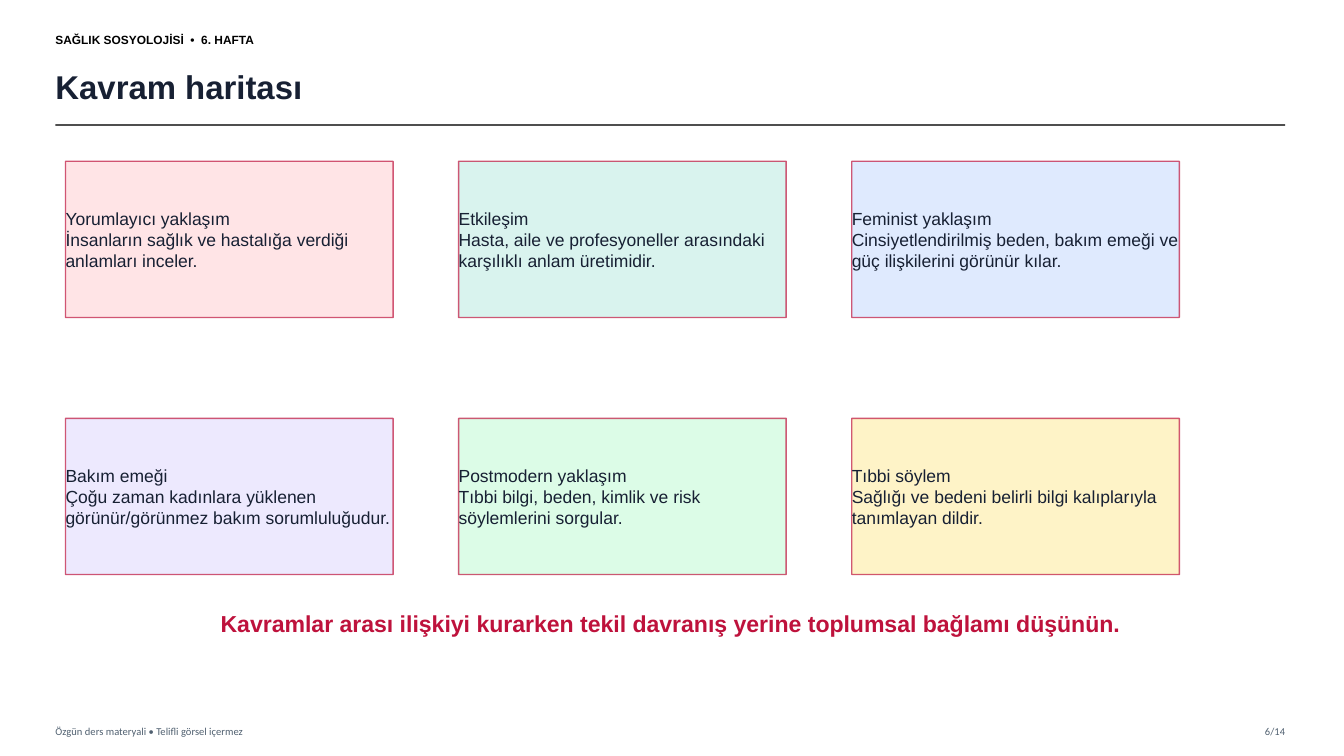
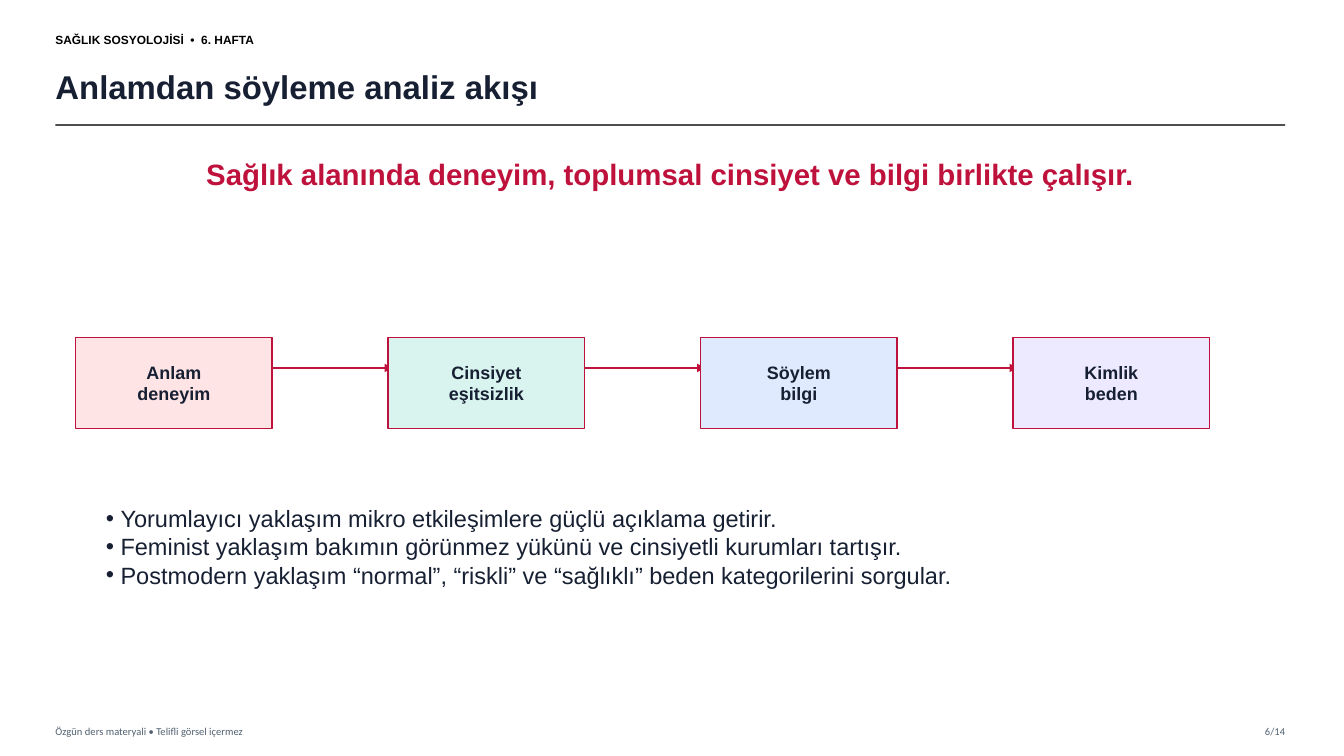
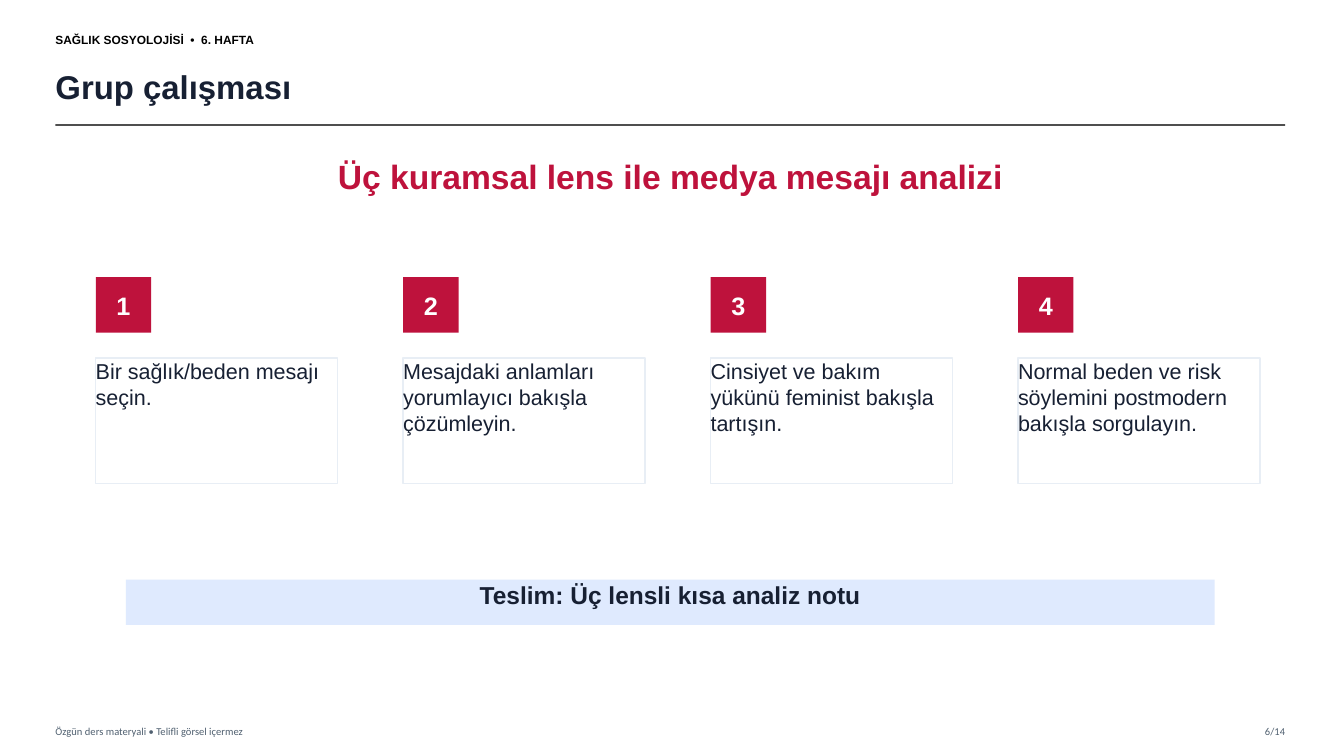
from lxml import etree
from pptx import Presentation
from pptx.dml.color import RGBColor
from pptx.enum import shapes, text
from pptx.oxml import ns
from pptx.util import Pt

COLORS = {
    "ink": "172033", "black": "000000", "white": "FFFFFF", "accent": "BE123C",
    "rule": "333333", "muted": "506070", "border": "E8EEF5",
    "rose": "FFE4E6", "mint": "D9F3EE", "blue": "DFEAFE",
    "lilac": "EDE9FE", "green": "DCFCE7", "yellow": "FEF3C7",
}
LEFT, CENTER, RIGHT = text.PP_ALIGN.LEFT, text.PP_ALIGN.CENTER, text.PP_ALIGN.RIGHT
TOP, MIDDLE = text.MSO_ANCHOR.TOP, text.MSO_ANCHOR.MIDDLE
MARGIN, RIGHT_EDGE = 39.6, 918


def rgb(name):
    return RGBColor.from_string(COLORS[name])


def add_xml(parent, tag, **attributes):
    return etree.SubElement(parent, ns.qn(tag), **attributes)


def write(shape, *lines, size, color="ink", font="Arial", bold=False,
          align=LEFT, anchor=TOP, bullet_indent=None):
    """Fill a shape with one paragraph per line."""
    frame = shape.text_frame
    frame.word_wrap = True
    frame.auto_size = text.MSO_AUTO_SIZE.NONE
    frame.vertical_anchor = anchor
    frame.margin_left = frame.margin_right = frame.margin_top = frame.margin_bottom = 0
    for index, line in enumerate(lines):
        paragraph = frame.add_paragraph() if index else frame.paragraphs[0]
        paragraph.alignment = align
        if bullet_indent:
            properties = paragraph._p.get_or_add_pPr()
            properties.set("marL", str(Pt(bullet_indent)))
            properties.set("indent", str(-Pt(bullet_indent)))
            add_xml(properties, "a:buFont", typeface=font)
            add_xml(properties, "a:buChar", char="•")
        run = paragraph.add_run()
        run.text = line
        run.font.name, run.font.size, run.font.bold = font, Pt(size), bold
        run.font.color.rgb = rgb(color)


def add_label(slide, box, *lines, **style):
    write(slide.shapes.add_textbox(*map(Pt, box)), *lines, **style)


def set_opacity(line, percent):
    color = line._ln.find(".//" + ns.qn("a:srgbClr"))
    add_xml(color, "a:alpha", val=str(percent * 1000))


def add_box(slide, box, fill, *lines, border=None, opacity=100, **style):
    panel = slide.shapes.add_shape(shapes.MSO_SHAPE.RECTANGLE, *map(Pt, box))
    panel.shadow.inherit = False
    panel.fill.solid()
    panel.fill.fore_color.rgb = rgb(fill)
    if border:
        panel.line.color.rgb = rgb(border)
        panel.line.width = Pt(1)
        if opacity < 100:
            set_opacity(panel.line, opacity)
    else:
        panel.line.fill.background()
    write(panel, *lines, **style)


def add_line(slide, start, end, y, color, width, opacity=100, arrow=False):
    line = slide.shapes.add_connector(
        shapes.MSO_CONNECTOR.STRAIGHT, Pt(start), Pt(y), Pt(end), Pt(y))
    line.line.color.rgb = rgb(color)
    line.line.width = Pt(width)
    if opacity < 100:
        set_opacity(line.line, opacity)
    if arrow:
        add_xml(line.line._ln, "a:tailEnd", type="triangle")
    add_xml(line._element.spPr, "a:effectLst")


def add_slide(deck, heading):
    """Start a slide with the course line, title, rule and footer."""
    slide = deck.slides.add_slide(deck.slide_layouts[5])
    title = slide.shapes.title
    title.left, title.top, title.width, title.height = map(Pt, (MARGIN, 41.76, 860.4, 39.6))
    write(title, heading, size=23.5, bold=True, anchor=MIDDLE)
    add_label(slide, (MARGIN, 18, 259.2, 20.16), "SAĞLIK SOSYOLOJİSİ  •  6. HAFTA",
              size=8.5, color="black", bold=True, anchor=MIDDLE)
    add_line(slide, MARGIN, RIGHT_EDGE, 89.28, "rule", 1.2, opacity=85)
    footer = dict(size=7.5, color="muted", font="Calibri", anchor=MIDDLE)
    add_label(slide, (MARGIN, 514.08, 432, 15.84),
              "Özgün ders materyali • Telifli görsel içermez", **footer)
    add_label(slide, (RIGHT_EDGE - 46.8, 514.08, 46.8, 15.84), "6/14", align=RIGHT, **footer)
    return slide


def add_message(slide, box, message, size):
    add_label(slide, box, message, size=size, color="accent", bold=True, align=CENTER)


def concept_map(deck):
    slide = add_slide(deck, "Kavram haritası")
    concepts = [
        ("rose", "Yorumlayıcı yaklaşım",
         "İnsanların sağlık ve hastalığa verdiği anlamları inceler."),
        ("mint", "Etkileşim",
         "Hasta, aile ve profesyoneller arasındaki karşılıklı anlam üretimidir."),
        ("blue", "Feminist yaklaşım",
         "Cinsiyetlendirilmiş beden, bakım emeği ve güç ilişkilerini görünür kılar."),
        ("lilac", "Bakım emeği",
         "Çoğu zaman kadınlara yüklenen görünür/görünmez bakım sorumluluğudur."),
        ("green", "Postmodern yaklaşım",
         "Tıbbi bilgi, beden, kimlik ve risk söylemlerini sorgular."),
        ("yellow", "Tıbbi söylem",
         "Sağlığı ve bedeni belirli bilgi kalıplarıyla tanımlayan dildir."),
    ]
    # Grid of three columns and two rows
    for index, (fill, term, meaning) in enumerate(concepts):
        row, column = divmod(index, 3)
        add_box(slide, (46.8 + column * 280.8, 115.2 + row * 183.6, 234, 111.6),
                fill, term, meaning, border="accent", opacity=70, size=12.5, anchor=MIDDLE)
    add_message(slide, (72, 435.6, 813.6, 32.4),
                "Kavramlar arası ilişkiyi kurarken tekil davranış yerine "
                "toplumsal bağlamı düşünün.", 16.5)


def analysis_flow(deck):
    slide = add_slide(deck, "Anlamdan söyleme analiz akışı")
    stages = [("rose", "Anlam", "deneyim"), ("mint", "Cinsiyet", "eşitsizlik"),
              ("blue", "Söylem", "bilgi"), ("lilac", "Kimlik", "beden")]
    first, step = 54, 223.2
    # Arrows lie behind the stages and reach slightly under them
    for index in range(len(stages) - 1):
        start = first + 129.6 + index * step
        add_line(slide, start, start + 97.2, 262.8, "accent", 2, arrow=True)
    for index, (fill, *words) in enumerate(stages):
        add_box(slide, (first + index * step, 241.2, 140.4, 64.8), fill, *words,
                border="accent", size=12.8, bold=True, align=CENTER, anchor=MIDDLE)
    add_message(slide, (57.6, 111.6, 842.4, 75.6),
                "Sağlık alanında deneyim, toplumsal cinsiyet ve bilgi birlikte çalışır.", 21)
    add_label(slide, (75.6, 360, 792, 90),
              "Yorumlayıcı yaklaşım mikro etkileşimlere güçlü açıklama getirir.",
              "Feminist yaklaşım bakımın görünmez yükünü ve cinsiyetli kurumları tartışır.",
              "Postmodern yaklaşım “normal”, “riskli” ve “sağlıklı” beden "
              "kategorilerini sorgular.",
              size=16.8, bullet_indent=10.55)


def group_work(deck):
    slide = add_slide(deck, "Grup çalışması")
    add_message(slide, (54, 111.6, 849.6, 46.8),
                "Üç kuramsal lens ile medya mesajı analizi", 24)
    tasks = [
        "Bir sağlık/beden mesajı seçin.",
        "Mesajdaki anlamları yorumlayıcı bakışla çözümleyin.",
        "Cinsiyet ve bakım yükünü feminist bakışla tartışın.",
        "Normal beden ve risk söylemini postmodern bakışla sorgulayın.",
    ]
    # Numbered tasks
    for index, task in enumerate(tasks):
        left = 68.4 + index * 219.6
        add_box(slide, (left, 198, 39.6, 39.6), "accent", str(index + 1), size=18,
                color="white", bold=True, align=CENTER, anchor=MIDDLE)
        add_box(slide, (left, 255.6, 172.8, 90), "white", task, border="border", size=15.4)
    # Hand-in band
    add_box(slide, (90, 414, 777.6, 32.4), "blue", "Teslim: Üç lensli kısa analiz notu",
            size=17.5, bold=True, align=CENTER)


def main():
    deck = Presentation()
    deck.slide_width, deck.slide_height = Pt(960), Pt(540)
    concept_map(deck)
    analysis_flow(deck)
    group_work(deck)
    deck.save("out.pptx")


if __name__ == "__main__":
    main()
